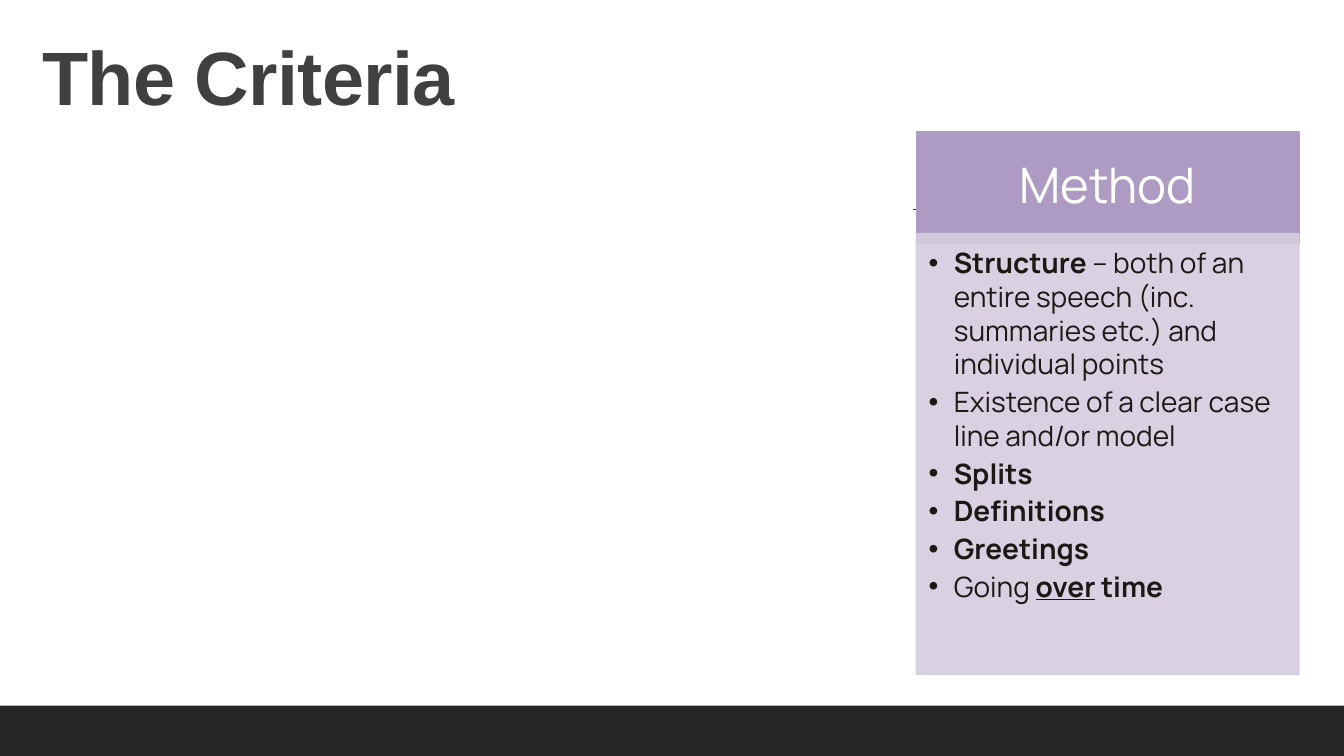
from pptx import Presentation
from pptx.dml.color import RGBColor
from pptx.enum.shapes import MSO_CONNECTOR as CONNECTOR, MSO_SHAPE as SHAPE
from pptx.enum.text import MSO_ANCHOR as ANCHOR, MSO_AUTO_SIZE as AUTO_SIZE, PP_ALIGN as ALIGN
from pptx.oxml.ns import qn
from pptx.util import Inches, Pt
from lxml.etree import SubElement

WIDTH, HEIGHT = 13.33, 7.5
TITLE_ONLY = 5
HEADING_FONT, BODY_FONT = "Arial", "Manrope"

WHITE = RGBColor(0xFF, 0xFF, 0xFF)
CHARCOAL = RGBColor(0x26, 0x26, 0x26)
GREY = RGBColor(0x40, 0x40, 0x40)
PURPLE = RGBColor(0xAD, 0x9B, 0xC3)
LILAC = RGBColor(0xD5, 0xCD, 0xDF)
INK = RGBColor(0x1C, 0x18, 0x15)

# Regions as (left, top, width, height)
TITLE_BOX = (0.32, 0.3, 11.48, 1.83)
BLANK_BOX = (0.11, 1.21, 8.94, 5.77)
CARD_BOX = (9.09, 1.31, 3.79, 5.38)
FOOTER_BOX = (0, HEIGHT * 14 / 15, WIDTH, HEIGHT / 15)
RULE_LEFT, RULE_RIGHT, RULE_TOP = 1.31, 12.21, 2.08

# Each point is a list of (text, style) runs: b is bold, u is underlined
POINTS = [
    [("Structure", "b"),
     (" – both of an entire speech (inc. summaries etc.) and individual points", "")],
    [("Existence of a clear case line and/or model", "")],
    [("Splits", "b")],
    [("Definitions", "b")],
    [("Greetings", "b")],
    [("Going ", ""), ("over", "bu"), (" ", ""), ("time", "b")],
]


def add_panel(page, box, fill, outlined=True, opacity=None):
    panel = page.shapes.add_shape(SHAPE.RECTANGLE, *map(Inches, box))
    panel.shadow.inherit = False
    panel.fill.solid()
    panel.fill.fore_color.rgb = fill
    if outlined:
        panel.line.color.rgb = fill
        panel.line.width = Pt(1.25)
    else:
        panel.line.fill.background()
    if opacity:
        for color in panel._element.spPr.iter(qn("a:srgbClr")):
            SubElement(color, qn("a:alpha"), val=str(opacity * 1000))
    return panel


def set_frame(shape, insets, anchor):
    frame = shape.text_frame
    frame.word_wrap = True
    frame.auto_size = AUTO_SIZE.NONE
    frame.vertical_anchor = anchor
    (frame.margin_left, frame.margin_top,
     frame.margin_right, frame.margin_bottom) = map(Inches, insets)
    return frame


def add_run(para, text, font, size, color, style=""):
    span = para.add_run()
    span.text = text
    span.font.name = font
    span.font.size = Pt(size)
    span.font.color.rgb = color
    span.font.bold = "b" in style
    span.font.underline = "u" in style
    return span


def add_bullet(para):
    properties = para._p.get_or_add_pPr()
    properties.set("marL", str(Inches(0.25)))
    properties.set("indent", str(-Inches(0.25)))
    SubElement(properties, qn("a:buFont"), typeface="Arial")
    SubElement(properties, qn("a:buChar"), char="•")


def add_backdrop(page):
    add_panel(page, FOOTER_BOX, CHARCOAL, outlined=False)
    rule = page.shapes.add_connector(
        CONNECTOR.STRAIGHT, *map(Inches, (RULE_LEFT, RULE_TOP, RULE_RIGHT, RULE_TOP)))
    rule.line.color.rgb = GREY
    rule.line.width = Pt(1)
    SubElement(rule._element.spPr, qn("a:effectLst"))
    add_panel(page, BLANK_BOX, WHITE)


def add_title(page, box, text):
    title = page.shapes.title
    title.left, title.top, title.width, title.height = map(Inches, box)
    para = set_frame(title, [0.1] * 4, ANCHOR.TOP).paragraphs[0]
    para.alignment = ALIGN.LEFT
    para.line_spacing = 0.9
    span = add_run(para, text, HEADING_FONT, 54, GREY, "b")
    span.font._element.set("spc", "-50")


def add_card(page, box, heading, points):
    left, top, width, height = box
    header_height, body_offset = 1.1, 1.01

    # Header band
    header = add_panel(page, (left, top, width, header_height), PURPLE)
    para = set_frame(header, (0.27, 0.16, 0.27, 0.16), ANCHOR.MIDDLE).paragraphs[0]
    para.alignment = ALIGN.CENTER
    para.line_spacing = 0.9
    add_run(para, heading, BODY_FONT, 35, WHITE)

    # Bulleted body, slightly overlapping the header
    body = add_panel(page, (left, top + body_offset, width, height - body_offset),
                     LILAC, opacity=90)
    frame = set_frame(body, (0.12, 0.12, 0.16, 0.17), ANCHOR.TOP)
    for index, runs in enumerate(points):
        para = frame.add_paragraph() if index else frame.paragraphs[0]
        add_bullet(para)
        para.alignment = ALIGN.LEFT
        para.space_after = Pt(3)
        for text, style in runs:
            add_run(para, text, BODY_FONT, 20, INK, style)


def main():
    deck = Presentation()
    deck.slide_width, deck.slide_height = Inches(WIDTH), Inches(HEIGHT)
    page = deck.slides.add_slide(deck.slide_layouts[TITLE_ONLY])
    add_backdrop(page)
    add_title(page, TITLE_BOX, "The Criteria")
    add_card(page, CARD_BOX, "Method", POINTS)
    deck.save("out.pptx")


if __name__ == "__main__":
    main()
